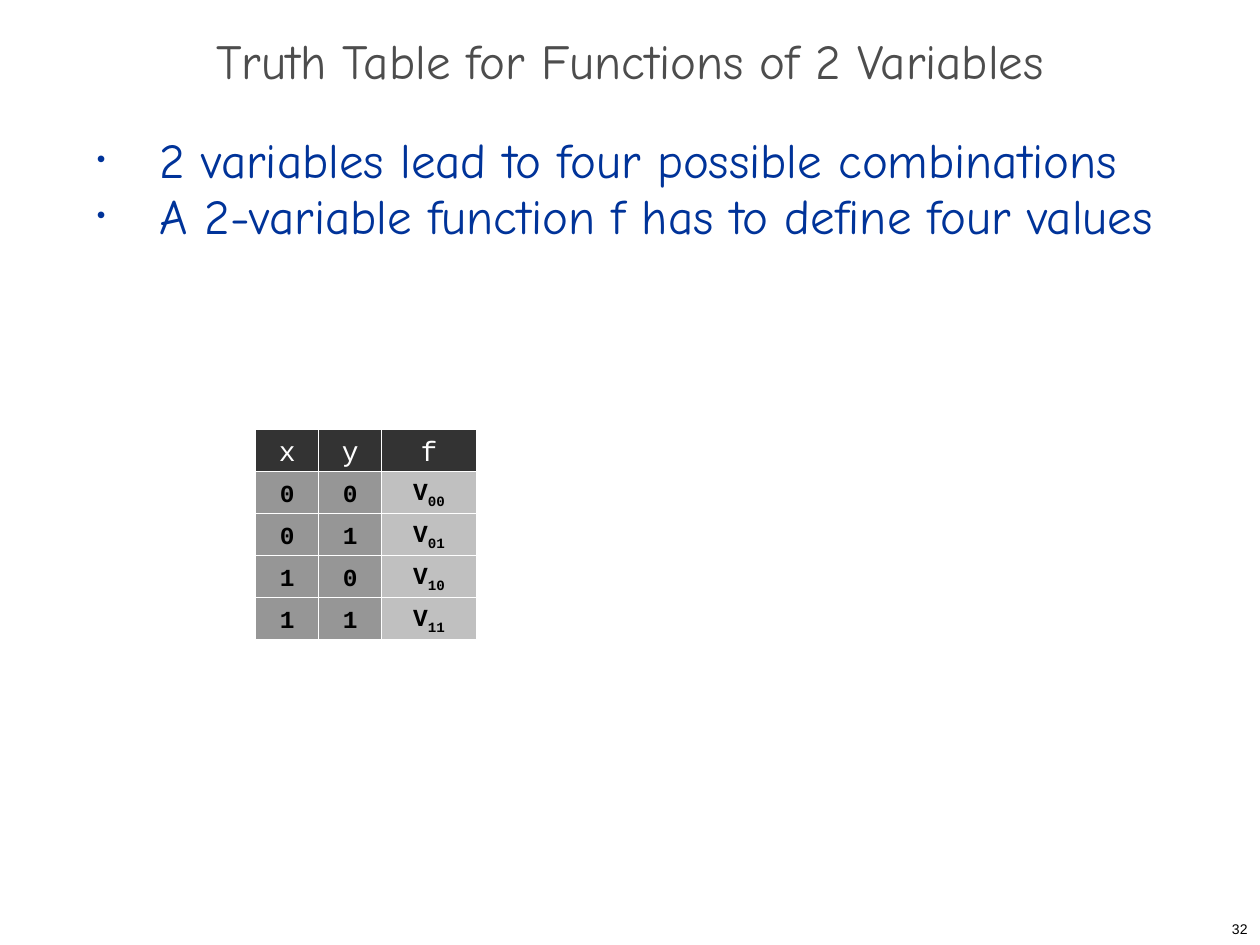
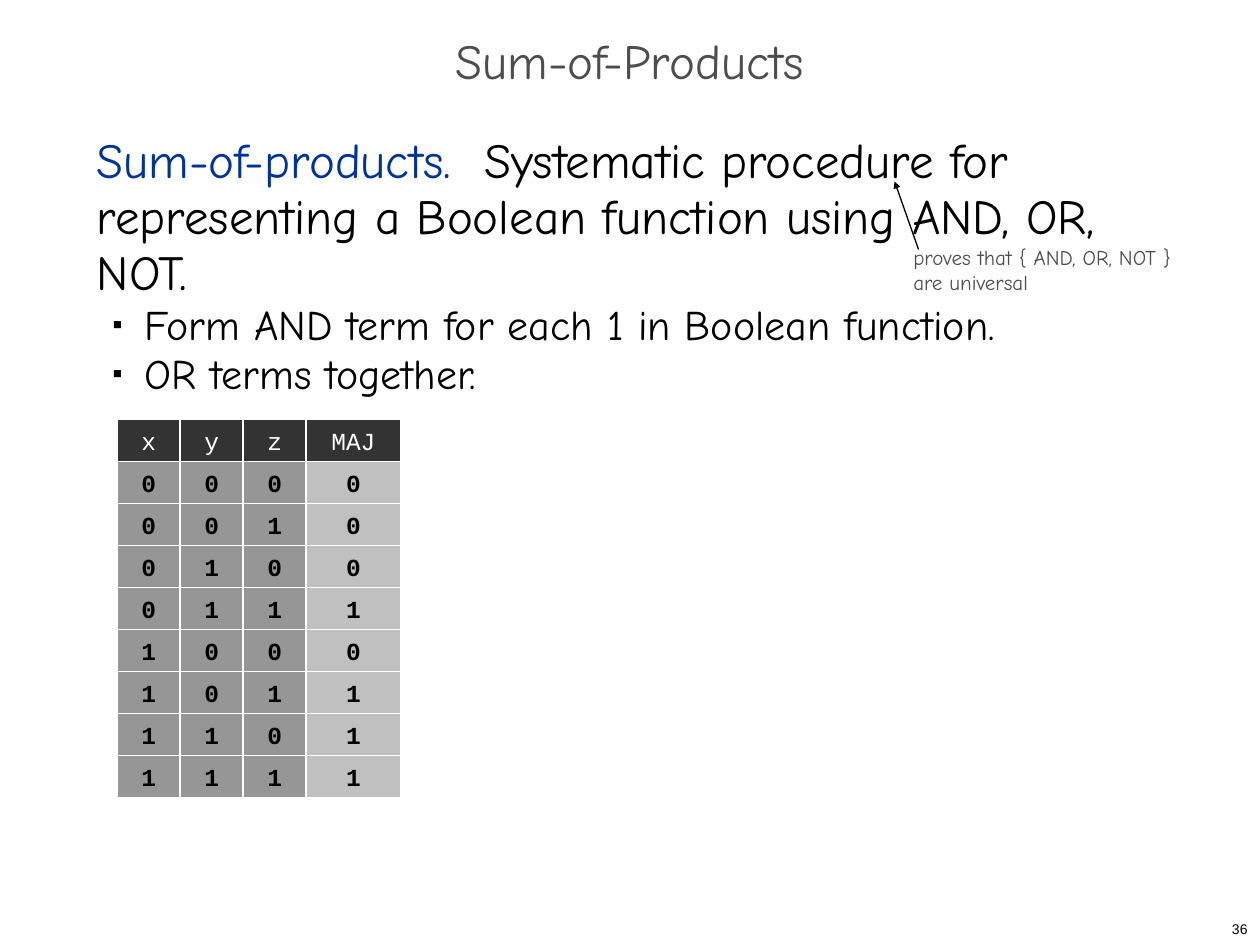
from itertools import product

from lxml import etree
from pptx import Presentation
from pptx.dml.color import RGBColor
from pptx.enum.shapes import MSO_CONNECTOR, MSO_SHAPE
from pptx.enum.text import MSO_ANCHOR as Anchor, PP_ALIGN as Align
from pptx.oxml.ns import qn
from pptx.util import Inches, Pt

# Shared style
BLUE, GREY, BLACK, WHITE = "003399", "4D4D4D", "000000", "FFFFFF"
HEADER_FILL, INPUT_FILL, OUTPUT_FILL = "333333", "969696", "C0C0C0"
TEXT_FONT, CODE_FONT, PLAIN_FONT = "Comic Neue", "Courier New", "Arial"
TITLE_BOX = (0, 0.17, 10, 0.72)
BODY_BOX = (0.67, 1, 8.58, 5.92)
NUMBER_BOX = (7.92, 7.25, 2.08, 0.25)
INPUT_WIDTH, OUTPUT_WIDTH, ROW_HEIGHT = 0.5, 0.75, 1 / 3

# Bullet: character, colour, size in percent, left margin, first-line indent
DOT = ("•", BLUE, 50, 0.5, -0.5)
SQUARE = ("■", BLACK, 35, 0.38, -0.25)


def color(value):
    return RGBColor.from_string(value)


def apply(target, formats):
    for name, value in formats.items():
        setattr(target, name, value)


def add_run(para, text, size, ink, font=TEXT_FONT, bold=False, baseline=0):
    span = para.add_run()
    span.text = text
    apply(span.font, {"size": Pt(size), "name": font, "bold": bold})
    span.font.color.rgb = color(ink)
    if baseline:
        span._r.get_or_add_rPr().set("baseline", str(baseline * 1000))


def add_bullet(para, char, ink, percent, margin, indent):
    props = para._p.get_or_add_pPr()
    props.set("marL", str(Inches(margin)))
    props.set("indent", str(Inches(indent)))
    bullet_color = etree.SubElement(props, qn("a:buClr"))
    etree.SubElement(bullet_color, qn("a:srgbClr"), val=ink)
    etree.SubElement(props, qn("a:buSzPct"), val=str(percent * 1000))
    etree.SubElement(props, qn("a:buFont"), typeface=PLAIN_FONT)
    etree.SubElement(props, qn("a:buChar"), char=char)


def add_text_box(page, box, wrap, anchor):
    frame = page.shapes.add_textbox(*map(Inches, box)).text_frame
    apply(frame, {"word_wrap": wrap, "vertical_anchor": anchor})
    return frame


def add_page(deck, title, number):
    """Title and page number."""
    page = deck.slides.add_slide(deck.slide_layouts[5])
    heading = page.shapes.title
    for name, value in zip(("left", "top", "width", "height"), TITLE_BOX):
        setattr(heading, name, Inches(value))
    apply(heading.text_frame, {"vertical_anchor": Anchor.MIDDLE, "word_wrap": True})
    para = heading.text_frame.paragraphs[0]
    apply(para, {"alignment": Align.CENTER, "line_spacing": 0.7})
    add_run(para, title, 28, GREY)

    para = add_text_box(page, NUMBER_BOX, False, Anchor.MIDDLE).paragraphs[0]
    para.alignment = Align.RIGHT
    add_run(para, str(number), 8, BLACK, PLAIN_FONT)
    return page


def add_body(page, box, items):
    """Each item: level, bullet or None, size, line spacing, (text, colour) pairs."""
    frame = add_text_box(page, box, True, Anchor.TOP)
    for index, (level, bullet, size, spacing, runs) in enumerate(items):
        para = frame.add_paragraph() if index else frame.paragraphs[0]
        apply(para, {"level": level, "line_spacing": Pt(spacing)})
        if bullet:
            add_bullet(para, *bullet)
        for text, ink in runs:
            add_run(para, text, size, ink)


def add_cell(page, box, fill):
    """Bordered tile of a truth table; gives its paragraph."""
    tile = page.shapes.add_shape(MSO_SHAPE.RECTANGLE, *map(Inches, box))
    tile.shadow.inherit = False
    tile.fill.solid()
    tile.fill.fore_color.rgb = color(fill)
    tile.line.width = Pt(0.75)
    tile.line.color.rgb = color(WHITE)
    apply(tile.text_frame, {"word_wrap": False, "vertical_anchor": Anchor.MIDDLE})
    para = tile.text_frame.paragraphs[0]
    para.alignment = Align.CENTER
    return para


def add_truth_table(page, left, top, names, output, header_size):
    """One row per input combination; output(bits) gives text and subscript."""
    inputs = len(names) - 1
    rows = [[(name, "") for name in names]]
    for bits in product((0, 1), repeat=inputs):
        rows.append([(str(bit), "") for bit in bits] + [output(bits)])

    for r, row in enumerate(rows):
        size, ink = (14, BLACK) if r else (header_size, WHITE)
        for c, (text, subscript) in enumerate(row):
            width, fill = ((OUTPUT_WIDTH, OUTPUT_FILL) if c == inputs
                           else (INPUT_WIDTH, INPUT_FILL))
            box = (left + c * INPUT_WIDTH, top + r * ROW_HEIGHT, width, ROW_HEIGHT)
            para = add_cell(page, box, fill if r else HEADER_FILL)
            add_run(para, text, size, ink, CODE_FONT, bold=r > 0)
            if subscript:
                add_run(para, subscript, size, ink, CODE_FONT, True, baseline=-25)


def add_note(page, left, top, lines):
    """Small remark with an arrow up to the text it comments on."""
    frame = add_text_box(page, (left, top, 2.56, 0.5), False, Anchor.MIDDLE)
    para = frame.paragraphs[0]
    for index, line in enumerate(lines):
        if index:
            para.add_line_break()
        add_run(para, line, 12, GREY)

    ends = (left + 0.14, top + 0.09, left - 0.05, top - 0.45)
    arrow = page.shapes.add_connector(MSO_CONNECTOR.STRAIGHT, *map(Inches, ends))
    arrow.line.width = Pt(0.75)
    arrow.line.color.rgb = color(BLACK)
    etree.SubElement(arrow.line._get_or_add_ln(), qn("a:tailEnd"),
                     type="triangle", w="sm", len="sm")
    etree.SubElement(arrow._element.spPr, qn("a:effectLst"))


def build_two_variables(deck):
    page = add_page(deck, "Truth Table for Functions of 2 Variables", 32)
    points = ("2 variables lead to four possible combinations",
              "A 2-variable function f has to define four values")
    add_body(page, BODY_BOX, [(0, DOT, 28, 32, [(point, BLUE)]) for point in points])
    add_truth_table(page, 2.03, 3.41, ("x", "y", "f"),
                    lambda bits: ("V", "".join(map(str, bits))), 16)


def build_sum_of_products(deck):
    page = add_page(deck, "Sum-of-Products", 36)
    definition = [("Sum-of-products.  ", BLUE),
                  ("Systematic procedure for representing a Boolean function "
                   "using AND, OR, NOT.", BLACK)]
    steps = ("Form AND term for each 1 in Boolean function.", "OR terms together.")
    add_body(page, BODY_BOX, [(0, None, 28, 32, definition)]
             + [(1, SQUARE, 24, 28, [(step, BLACK)]) for step in steps])
    add_note(page, 7.15, 1.89, ("proves that { AND, OR, NOT }", "are universal"))
    add_truth_table(page, 0.93, 3.33, ("x", "y", "z", "MAJ"),
                    lambda bits: (str(int(sum(bits) >= 2)), ""), 14)


def main():
    deck = Presentation()
    apply(deck, {"slide_width": Inches(10), "slide_height": Inches(7.5)})
    build_two_variables(deck)
    build_sum_of_products(deck)
    deck.save("out.pptx")


if __name__ == "__main__":
    main()
